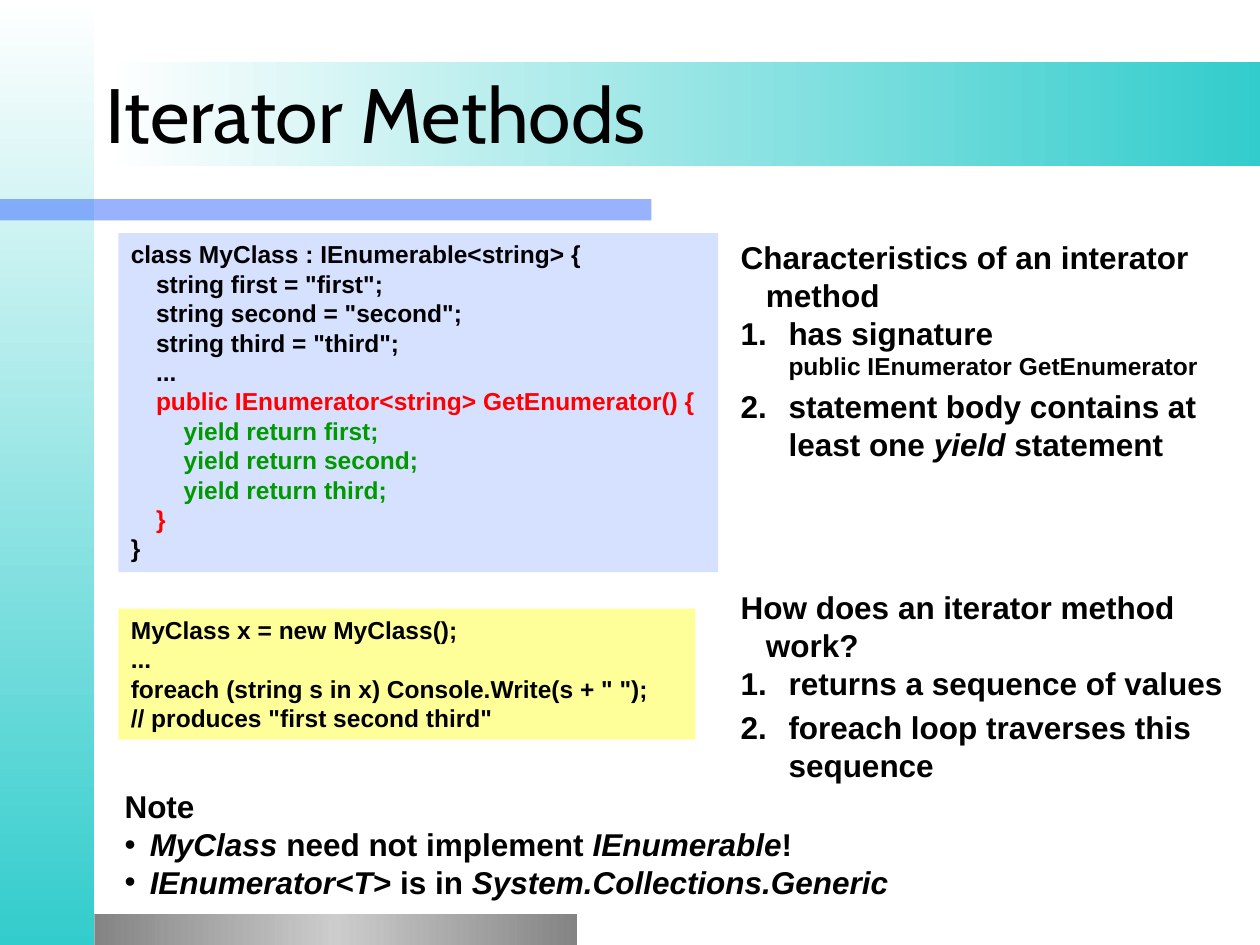
from dataclasses import dataclass

from lxml.etree import SubElement
from pptx import Presentation
from pptx.dml.color import RGBColor
from pptx.enum.shapes import MSO_SHAPE
from pptx.enum.text import MSO_ANCHOR
from pptx.oxml.ns import qn
from pptx.util import Inches, Pt

HUES = {
    "ink": "000000", "white": "FFFFFF", "teal": "33CCCC", "blue": "3366FF",
    "steel": "848484", "silver": "CCCCCC", "sky": "D6E0FF", "lemon": "FFFF99",
    "red": "FF0000", "green": "009900",
}


@dataclass(frozen=True)
class Bar:
    box: tuple[float, float, float, float]
    hues: tuple[str, ...]
    angle: int = 0
    alpha: int = 100


@dataclass(frozen=True)
class Run:
    text: str
    hue: str = "ink"
    size: float | None = None
    slant: bool = False


@dataclass(frozen=True)
class Para:
    runs: tuple[Run, ...]
    left: float = 0
    hang: float = 0
    mark: str = ""
    before: float = 0


@dataclass(frozen=True)
class Panel:
    box: tuple[float, float, float, float]
    paras: list[Para]
    size: float = 18
    fill: str = ""


def node(parent, tag: str, **attrs):
    return SubElement(parent, qn(tag), {k: str(v) for k, v in attrs.items()})


def place(slide, box, fill: str = ""):
    """Add a plain rectangle, or a text box when there is no fill."""
    spot = [Inches(n) for n in box]
    if not fill:
        return slide.shapes.add_textbox(*spot)
    shape = slide.shapes.add_shape(MSO_SHAPE.RECTANGLE, *spot)
    shape.shadow.inherit = False
    shape.line.fill.background()
    shape.fill.solid()
    shape.fill.fore_color.rgb = RGBColor.from_string(HUES[fill])
    return shape


def draw_bar(slide, bar: Bar) -> None:
    shape = place(slide, bar.box, bar.hues[0])
    solid = shape.fill._xPr.find(qn("a:solidFill"))
    if len(bar.hues) == 1:
        node(solid[0], "a:alpha", val=bar.alpha * 1000)
        return
    grad = node(shape.fill._xPr, "a:gradFill", rotWithShape=1)
    stops = node(grad, "a:gsLst")
    for i, hue in enumerate(bar.hues):
        stop = node(stops, "a:gs", pos=100000 * i // (len(bar.hues) - 1))
        node(stop, "a:srgbClr", val=HUES[hue])
    node(grad, "a:lin", ang=bar.angle * 60000, scaled=0)
    solid.getparent().replace(solid, grad)


def write(shape, paras: list[Para], *, size: float, font: str = "Arial",
          bold: bool = True, anchor=MSO_ANCHOR.TOP) -> None:
    frame = shape.text_frame
    frame.word_wrap = True
    frame.vertical_anchor = anchor
    for i, para in enumerate(paras):
        line = frame.add_paragraph() if i else frame.paragraphs[0]
        line.space_before = Pt(para.before)
        props = line._p.get_or_add_pPr()
        props.set("algn", "l")
        props.set("marL", str(Inches(para.left)))
        props.set("indent", str(-Inches(para.hang)))
        if para.mark:
            node(props, "a:buFont", typeface="Arial")
        if para.mark == "1.":
            node(props, "a:buAutoNum", type="arabicPeriod")
        elif para.mark:
            node(props, "a:buChar", char=para.mark)
        else:
            node(props, "a:buNone")
        for part in para.runs:
            for j, piece in enumerate(part.text.split("\n")):
                if j:
                    line.add_line_break()
                if not piece:
                    continue
                run = line.add_run()
                run.text = piece
                run.font.name = font
                run.font.size = Pt(part.size or size)
                run.font.bold = bold
                run.font.italic = part.slant
                run.font.color.rgb = RGBColor.from_string(HUES[part.hue])


def draw_panel(slide, panel: Panel) -> None:
    shape = place(slide, panel.box, panel.fill)
    write(shape, panel.paras, size=panel.size)


def code(text: str, hue: str = "ink", left: float = 0) -> list[Para]:
    return [Para((Run(line, hue),), left) for line in text.split("\n")]


def head(text: str) -> Para:
    return Para((Run(text),), 0.2, 0.2)


def step(*runs: Run, before: float = 0) -> Para:
    return Para(runs, 0.38, 0.38, "1.", before)


def dot(*runs: Run) -> Para:
    return Para(runs, 0.2, 0.2, "•")


def term(text: str) -> Run:
    return Run(text, slant=True)


BARS = [
    Bar((0, 0, 0.75, 7.5), ("white", "teal"), angle=90),
    Bar((0, 1.58, 5.17, 0.17), ("blue",), alpha=50),
    Bar((0.75, 7.25, 3.83, 0.25), ("steel", "silver", "steel")),
    Bar((0.84, 0.49, 9.16, 0.83), ("white", "teal")),
]

GAP = 3.6  # 20% of the 18 pt text
INNER, DEEP = 0.2, 0.42  # code indents

PANELS = [
    # Class listing
    Panel((0.94, 1.85, 4.76, 2.69),
          code("class MyClass : IEnumerable<string> {")
          + code('string first = "first";\nstring second = "second";\n'
                 'string third = "third";\n...', left=INNER)
          + code("public IEnumerator<string> GetEnumerator() {", "red", INNER)
          + code("yield return first;\nyield return second;\n"
                 "yield return third;", "green", DEEP)
          + code("}", "red", INNER) + code("}"),
          size=14, fill="sky"),
    # Characteristics
    Panel((5.78, 1.84, 4.22, 1.91), [
        head("Characteristics of an interator method"),
        step(Run("has signature\n"),
             Run("public IEnumerator GetEnumerator", size=14)),
        step(Run("statement body contains at least one "), term("yield"),
             Run(" statement"), before=GAP)]),
    # Usage listing
    Panel((0.94, 4.83, 4.58, 1.04),
          code('MyClass x = new MyClass();\n...\n'
               'foreach (string s in x) Console.Write(s + " ");\n'
               '// produces "first second third"'),
          size=14, fill="lemon"),
    # How it works
    Panel((5.78, 4.62, 4.22, 1.68), [
        head("How does an iterator method work?"),
        step(Run("returns a sequence of values")),
        step(Run("foreach loop traverses this sequence"), before=GAP)]),
    # Note
    Panel((0.89, 6.2, 8.92, 1.01), [
        head("Note"),
        dot(term("MyClass"), Run(" need not implement "),
            term("IEnumerable"), Run("!")),
        dot(term("IEnumerator<T>"), Run(" is in "),
            term("System.Collections.Generic"))]),
]


def main() -> None:
    deck = Presentation()
    deck.slide_width, deck.slide_height = Inches(10), Inches(7.5)
    slide = deck.slides.add_slide(deck.slide_layouts[6])
    for bar in BARS:
        draw_bar(slide, bar)
    title = place(slide, (0.74, 0.27, 8.5, 1.25))
    write(title, [Para((Run("Iterator Methods"),))], size=44, font="Cabin",
          bold=False, anchor=MSO_ANCHOR.MIDDLE)
    for panel in PANELS:
        draw_panel(slide, panel)
    deck.save("out.pptx")


if __name__ == "__main__":
    main()
